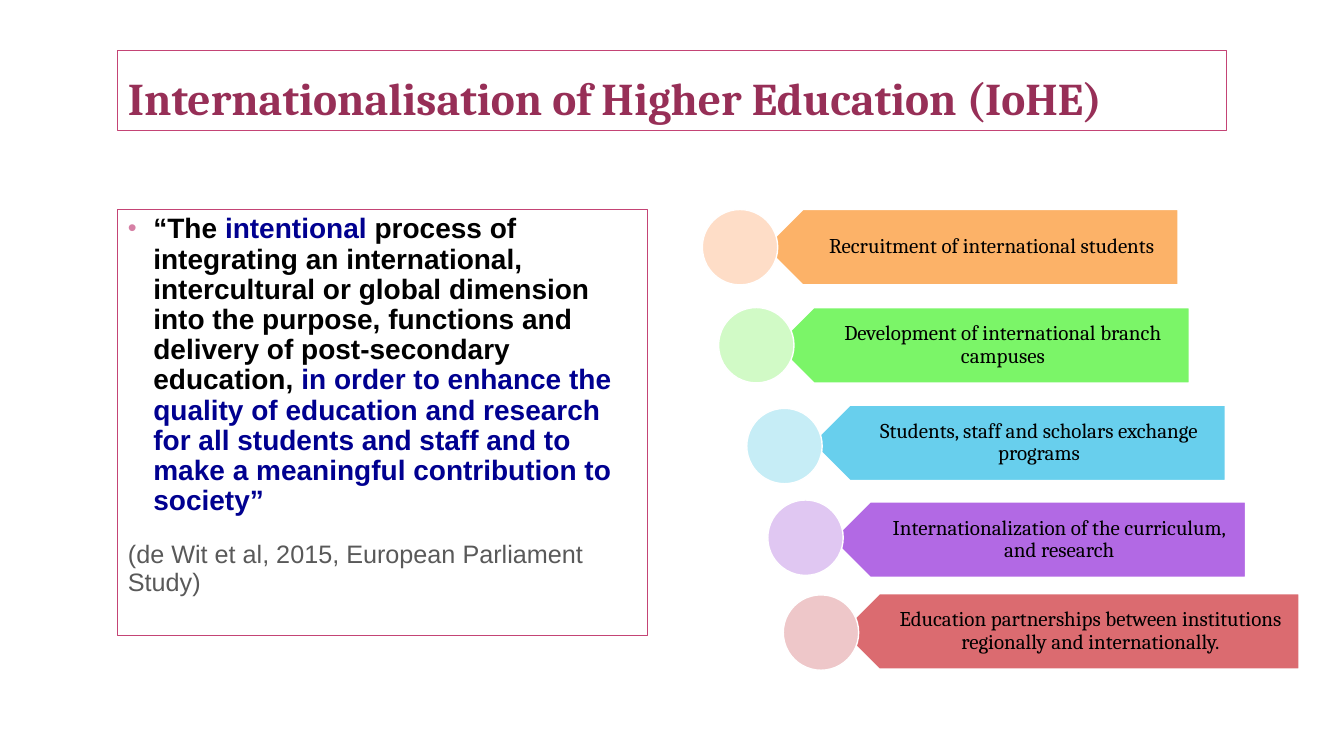
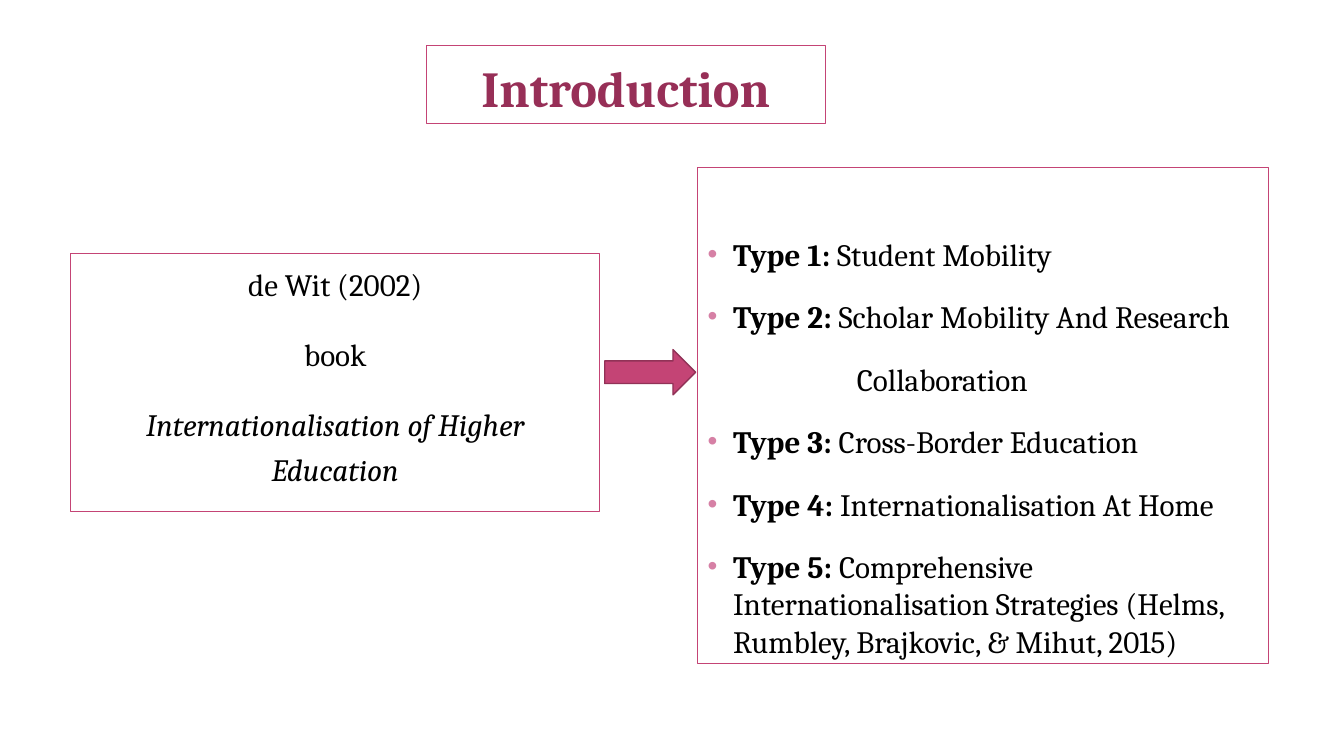
from collections import namedtuple

from lxml.etree import SubElement
from pptx import Presentation
from pptx.dml.color import RGBColor
from pptx.enum.shapes import MSO_SHAPE
from pptx.enum.text import MSO_ANCHOR, MSO_AUTO_SIZE, PP_ALIGN
from pptx.oxml.ns import qn
from pptx.util import Cm, Pt

COLOURS = {
    "frame": "C44475", "title": "972F57", "arrow_edge": "913257",
    "bullet": "D680A5", "text": "000000", "stress": "000090",
    "citation": "595959", "white": "FFFFFF",
}
SERIF, SANS = "Cambria", "Arial"
HANGING = 0.64
GAP = Pt(18)

Box = namedtuple("Box", "left top width height")  # centimetres
Activity = namedtuple(
    "Activity", "label bar_colour disc_colour bar_x bar_y bar_width disc_x disc_y")

ACTIVITIES = [
    Activity("Recruitment of international students",
             "FCB268", "FEDDC7", 1.58, 0, 10.41, 0, 0),
    Activity("Development of international branch campuses",
             "7BF568", "D1FAC6", 1.86, 2.47, 10.41, 0.41, 2.47),
    Activity("Students, staff and scholars exchange programs",
             "68CFED", "C6EDF6", 2.77, 4.93, 10.41, 1.12, 5.01),
    Activity("Internationalization of the curriculum, and research",
             "B269E4", "E0C7F2", 3.28, 7.37, 10.41, 1.65, 7.32),
    Activity("Education partnerships between institutions regionally and internationally.",
             "DB6B70", "EEC7C9", 3.51, 9.68, 11.53, 2.04, 9.71),
]
DISC_SIZE = 1.9
LABEL_SHIFT = 0.48

QUOTE = [
    ("“The ", "text"),
    ("intentional ", "stress"),
    ("process of integrating an international, intercultural or global dimension "
     "into the purpose, functions and delivery of post-secondary education, ", "text"),
    ("in order to enhance the quality of education and research for all students "
     "and staff and to make a meaningful contribution to society”", "stress"),
]

TYPES = [
    ("Type 1: ", "Student Mobility"),
    ("Type 2: ", "Scholar Mobility And Research"),
    (None, "Collaboration"),
    ("Type 3: ", "Cross-Border Education"),
    ("Type 4: ", "Internationalisation At Home"),
    ("Type 5: ", "Comprehensive Internationalisation Strategies "
                 "(Helms, Rumbley, Brajkovic, & Mihut, 2015)"),
]


def rgb(name):
    return RGBColor.from_string(COLOURS.get(name, name))


def lengths(box):
    return [Cm(value) for value in box]


def style_font(font, size, name, colour="text", bold=False, italic=False):
    font.size, font.name = Pt(size), name
    font.bold, font.italic = bold, italic
    font.color.rgb = rgb(colour)


def add_run(paragraph, text, bold=None, colour=None):
    run = paragraph.add_run()
    run.text = text
    if bold is not None:
        run.font.bold = bold
    if colour:
        run.font.color.rgb = rgb(colour)


def set_bullet(paragraph, margin=0, bulleted=False):
    """Set the left margin, with a hanging bullet or with none."""
    properties = paragraph._p.get_or_add_pPr()
    properties.set("marL", str(Cm(margin)))
    properties.set("indent", str(-Cm(margin) if bulleted else 0))
    if not bulleted:
        SubElement(properties, qn("a:buNone"))
        return
    colour = SubElement(properties, qn("a:buClr"))
    SubElement(colour, qn("a:srgbClr"), val=COLOURS["bullet"])
    SubElement(properties, qn("a:buSzPct"), val="90000")
    SubElement(properties, qn("a:buFont"), typeface=SANS)
    SubElement(properties, qn("a:buChar"), char="•")


def frame_placeholder(placeholder, box):
    """Move a placeholder, outline it and return its text frame."""
    (placeholder.left, placeholder.top,
     placeholder.width, placeholder.height) = lengths(box)
    placeholder.line.color.rgb = rgb("frame")
    placeholder.line.width = Pt(0.75)
    frame = placeholder.text_frame
    frame.auto_size = MSO_AUTO_SIZE.NONE
    frame.word_wrap = True
    return frame


def next_paragraph(frame, line_spacing):
    """Return the empty first paragraph, or a new one set off by the gap."""
    first = frame.paragraphs[0]
    started = bool(first.runs)
    paragraph = frame.add_paragraph() if started else first
    paragraph.space_before = GAP if started else Pt(0)
    paragraph.line_spacing = line_spacing
    return paragraph


def set_title(slide, box, text, size, alignment):
    frame = frame_placeholder(slide.shapes.title, box)
    frame.vertical_anchor = MSO_ANCHOR.BOTTOM
    heading = next_paragraph(frame, 0.9)
    heading.alignment = alignment
    add_run(heading, text)
    style_font(heading.font, size, SERIF, "title", bold=True)


def add_preset(slide, preset, box, fill, edge):
    shape = slide.shapes.add_shape(preset, *lengths(box))
    shape.shadow.inherit = False
    shape.fill.solid()
    shape.fill.fore_color.rgb = rgb(fill)
    shape.line.color.rgb = rgb(edge)
    shape.line.width = Pt(1)
    return shape


def fill_definition(placeholder, box):
    frame = frame_placeholder(placeholder, box)
    quote = next_paragraph(frame, 0.9)
    set_bullet(quote, HANGING, bulleted=True)
    for text, colour in QUOTE:
        add_run(quote, text, colour=colour)
    style_font(quote.font, 20, SANS, bold=True)

    citation = next_paragraph(frame, 0.9)
    set_bullet(citation)
    add_run(citation, "(de Wit et al, 2015, European Parliament Study)")
    style_font(citation.font, 18, SANS, "citation")


def add_activity(slide, origin, activity):
    bar_box = Box(origin.left + activity.bar_x, origin.top + activity.bar_y,
                  activity.bar_width, DISC_SIZE)
    bar = add_preset(slide, MSO_SHAPE.PENTAGON, bar_box, activity.bar_colour, "white")
    bar.rotation = 180

    label_box = bar_box._replace(left=bar_box.left + LABEL_SHIFT,
                                 width=bar_box.width - LABEL_SHIFT)
    frame = slide.shapes.add_textbox(*lengths(label_box)).text_frame
    frame.word_wrap = True
    frame.vertical_anchor = MSO_ANCHOR.MIDDLE
    frame.margin_left, frame.margin_right = Cm(0.84), Cm(0.3)
    frame.margin_top = frame.margin_bottom = Cm(0.15)
    label = next_paragraph(frame, 0.9)
    label.alignment = PP_ALIGN.CENTER
    add_run(label, activity.label)
    style_font(label.font, 15, SERIF)

    disc_box = Box(origin.left + activity.disc_x, origin.top + activity.disc_y,
                   DISC_SIZE, DISC_SIZE)
    add_preset(slide, MSO_SHAPE.OVAL, disc_box, activity.disc_colour, "white")


def fill_source_book(placeholder, box):
    frame = frame_placeholder(placeholder, box)
    book_title = "Internationalisation of Higher Education"
    for text in ("de Wit (2002)", "book", book_title):
        line = next_paragraph(frame, 1.2)
        line.alignment = PP_ALIGN.CENTER
        set_bullet(line)
        add_run(line, text)
        style_font(line.font, 22.2, SERIF, italic=text == book_title)


def fill_types(placeholder, box):
    frame = frame_placeholder(placeholder, box)
    frame.margin_top = Cm(1.7)
    for heading, text in TYPES:
        entry = next_paragraph(frame, 1.0)
        if heading:
            set_bullet(entry, HANGING, bulleted=True)
            add_run(entry, heading, bold=True)
        else:
            set_bullet(entry, 3.76)
        add_run(entry, text)
        style_font(entry.font, 22.2, SERIF)


def build_definition_slide(deck):
    slide = deck.slides.add_slide(deck.slide_layouts[1])
    set_title(slide, Box(2.97, 1.27, 27.94, 2.01),
              "Internationalisation of Higher Education (IoHE)", 32.4, PP_ALIGN.LEFT)
    fill_definition(slide.placeholders[1], Box(2.97, 5.28, 13.34, 10.74))
    activities_box = Box(17.7, 5.28, 15.04, 11.61)
    for activity in ACTIVITIES:
        add_activity(slide, activities_box, activity)


def build_introduction_slide(deck):
    slide = deck.slides.add_slide(deck.slide_layouts[3])
    set_title(slide, Box(10.74, 1.14, 10.06, 1.98),
              "Introduction", 36, PP_ALIGN.CENTER)
    fill_source_book(slide.placeholders[1], Box(1.78, 6.38, 13.34, 6.5))
    fill_types(slide.placeholders[2], Box(17.58, 4.22, 14.4, 12.5))
    add_preset(slide, MSO_SHAPE.RIGHT_ARROW, Box(15.24, 8.81, 2.29, 1.14),
               "frame", "arrow_edge")


def main():
    deck = Presentation()
    deck.slide_width, deck.slide_height = Cm(33.87), Cm(19.05)
    build_definition_slide(deck)
    build_introduction_slide(deck)
    deck.save("out.pptx")


if __name__ == "__main__":
    main()
